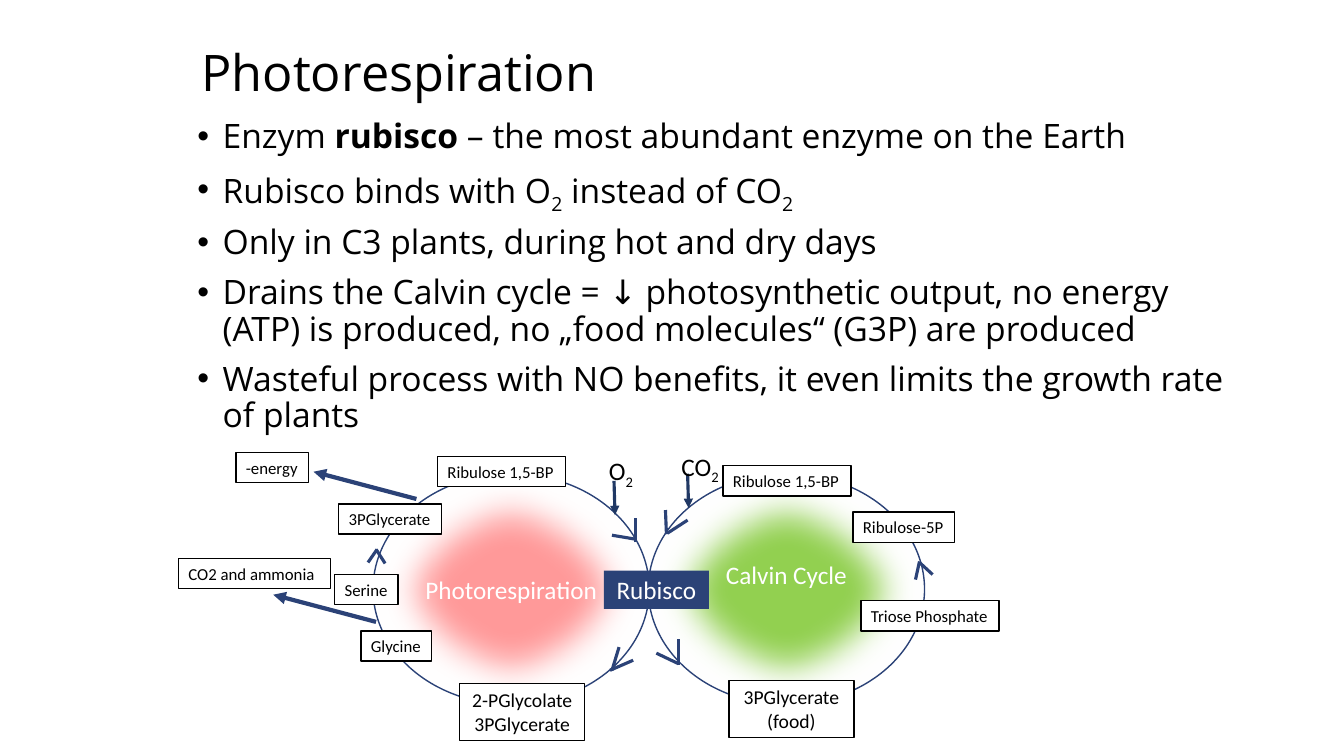
from dataclasses import dataclass
from typing import Optional

import lxml.etree
import pptx
import pptx.dml.color
import pptx.enum.shapes
import pptx.enum.text
import pptx.oxml.ns
import pptx.util

Inches, Pt = pptx.util.Inches, pptx.util.Pt
qn = pptx.oxml.ns.qn
SHAPES = pptx.enum.shapes.MSO_SHAPE
ALIGN = pptx.enum.text.PP_ALIGN
ANCHOR = pptx.enum.text.MSO_ANCHOR

BLACK, WHITE, NAVY, DARK_NAVY = "000000", "FFFFFF", "2B4277", "203864"
CYCLE_TOP, CYCLE_W, CYCLE_H = 4.7, 2.74, 2.29


@dataclass
class Run:
    text: str
    bold: bool = False
    sub: bool = False


@dataclass
class Cycle:
    name: str
    left: float
    fill: str
    line: str
    bottom_inset: float = 0.05


@dataclass
class Label:
    lines: list[str]
    left: float
    top: float
    width: float
    height: float = 0.3
    size: int = 12
    centred: bool = False


@dataclass
class Arrow:
    start: tuple[float, float]
    end: tuple[float, float]
    color: str
    weight: float


@dataclass
class Chevron:
    """Two strokes that meet at a tip and show the cycle's direction."""
    strokes: list[tuple[float, float, float, float]]


BULLETS = [
    [Run("Enzym "), Run("rubisco", bold=True), Run(" – the most abundant enzyme on the Earth")],
    [Run("Rubisco binds with O"), Run("2", sub=True), Run(" instead of CO"), Run("2", sub=True)],
    [Run("Only in C3 plants, during hot and dry days")],
    [Run("Drains the Calvin cycle = ↓ photosynthetic output, no energy (ATP) is produced, "
         "no „food molecules“ (G3P) are produced")],
    [Run("Wasteful process with NO benefits, it even limits the growth rate of plants")],
]
CYCLES = [
    Cycle("Calvin Cycle", 6.43, "92D050", BLACK, bottom_inset=0.35),
    Cycle("Photorespiration", 3.7, "FF9999", DARK_NAVY),
]
ARROWS = [
    Arrow((6.82, 4.7), (6.83, 5.04), DARK_NAVY, 2.25),
    Arrow((6.09, 4.77), (6.1, 5.11), DARK_NAVY, 2.25),
    Arrow((3.73, 6.17), (2.71, 5.9), NAVY, 3),
    Arrow((4.13, 4.95), (3.11, 4.68), NAVY, 3),
]
CHEVRONS = [
    Chevron([(6.6, 5.06, 6.61, 5.3), (6.62, 5.29, 6.82, 5.16)]),
    Chevron([(6.51, 6.48, 6.72, 6.58), (6.73, 6.6, 6.73, 6.34)]),
    Chevron([(6.07, 5.31, 6.31, 5.35), (6.3, 5.38, 6.3, 5.14)]),
    Chevron([(6.05, 6.65, 6.28, 6.55), (6.07, 6.65, 6.14, 6.42)]),
    Chevron([(9.08, 5.75, 9.12, 5.57), (9.12, 5.58, 9.25, 5.7)]),
    Chevron([(3.65, 5.58, 3.74, 5.45), (3.73, 5.45, 3.82, 5.59)]),
]
LABELS = [
    Label(["3PGlycerate (food)"], 7.23, 6.75, 1.24, 0.57, 14, True),
    Label(["Triose Phosphate"], 8.54, 5.96, 1.37),
    Label(["Ribulose-5P"], 8.46, 5.08, 1.01),
    Label(["Ribulose 1,5-BP"], 7.17, 4.62, 1.27),
    Label(["Ribulose 1,5-BP"], 4.34, 4.53, 1.27),
    Label(["2-PGlycolate", "3PGlycerate"], 4.56, 6.78, 1.24, 0.57, 14, True),
    Label(["Glycine"], 3.58, 6.26, 0.7),
    Label(["Serine"], 3.32, 5.7, 0.63),
    Label(["3PGlycerate"], 3.36, 5, 1.02),
    Label(["CO2 and ammonia"], 1.77, 5.54, 1.51),
    Label(["-energy"], 2.34, 4.49, 0.72),
]


def rgb(color: str) -> pptx.dml.color.RGBColor:
    return pptx.dml.color.RGBColor.from_string(color)


def add_runs(p, runs: list[Run], size: float, color: str = BLACK, font: str = "Calibri") -> None:
    for run in runs:
        r = p.add_run()
        r.text = run.text
        r.font.name, r.font.size, r.font.bold = font, Pt(size), run.bold
        r.font.color.rgb = rgb(color)
        if run.sub:
            r.font._element.set("baseline", "-25000")


def add_text(slide, box: tuple, paragraphs: list[list[Run]], size: float,
             font: str = "Calibri", wrap: bool = True):
    tf = slide.shapes.add_textbox(*map(Inches, box)).text_frame
    tf.word_wrap = wrap
    for i, runs in enumerate(paragraphs):
        p = tf.add_paragraph() if i else tf.paragraphs[0]
        add_runs(p, runs, size, font=font)
    return tf


def add_bullet(p) -> None:
    pPr = p._p.get_or_add_pPr()
    pPr.set("marL", str(Inches(0.25)))
    pPr.set("indent", str(Inches(-0.25)))
    lxml.etree.SubElement(pPr, qn("a:buFont")).set("typeface", "Arial")
    lxml.etree.SubElement(pPr, qn("a:buChar")).set("char", "•")


def add_box(slide, kind, box: tuple, fill: Optional[str], line: Optional[str]):
    sp = slide.shapes.add_shape(kind, *map(Inches, box))
    sp.shadow.inherit = False
    if fill:
        sp.fill.solid()
        sp.fill.fore_color.rgb = rgb(fill)
    else:
        sp.fill.background()
    if line:
        sp.line.color.rgb = rgb(line)
        sp.line.width = Pt(1)
    else:
        sp.line.fill.background()
    return sp


def add_centred(sp, text: str, color: str) -> None:
    sp.text_frame.vertical_anchor = ANCHOR.MIDDLE
    p = sp.text_frame.paragraphs[0]
    p.alignment = ALIGN.CENTER
    add_runs(p, [Run(text)], 18, color)


def add_cycle(slide, cycle: Cycle) -> None:
    sp = add_box(slide, SHAPES.OVAL, (cycle.left, CYCLE_TOP, CYCLE_W, CYCLE_H),
                 cycle.fill, cycle.line)
    effects = sp._element.spPr.find(qn("a:effectLst"))
    lxml.etree.SubElement(effects, qn("a:softEdge")).set("rad", str(Pt(25)))
    sp.text_frame.margin_bottom = Inches(cycle.bottom_inset)
    add_centred(sp, cycle.name, WHITE)


def add_label(slide, label: Label) -> None:
    sp = add_box(slide, SHAPES.RECTANGLE, (label.left, label.top, label.width, label.height),
                 WHITE, BLACK)
    tf = sp.text_frame
    tf.vertical_anchor = ANCHOR.TOP
    tf.word_wrap = label.centred
    for i, line in enumerate(label.lines):
        p = tf.add_paragraph() if i else tf.paragraphs[0]
        p.alignment = ALIGN.CENTER if label.centred else ALIGN.LEFT
        add_runs(p, [Run(line)], label.size)


def add_line(slide, ends: tuple, color: str, weight: float, arrow: bool = False) -> None:
    cx = slide.shapes.add_connector(pptx.enum.shapes.MSO_CONNECTOR.STRAIGHT, *map(Inches, ends))
    cx.line.color.rgb = rgb(color)
    cx.line.width = Pt(weight)
    if arrow:
        lxml.etree.SubElement(cx.line._get_or_add_ln(), qn("a:tailEnd")).set("type", "triangle")
    lxml.etree.SubElement(cx._element.spPr, qn("a:effectLst"))


def main() -> None:
    prs = pptx.Presentation()
    prs.slide_width, prs.slide_height = Inches(13.33), Inches(7.5)
    slide = prs.slides.add_slide(prs.slide_layouts[6])

    title = add_text(slide, (1.9, 0.43, 10.51, 1.33), [[Run("Photorespiration")]], 36, "Open Sans")
    title.paragraphs[0].line_spacing = 0.9
    body = add_text(slide, (1.86, 1.14, 10.51, 4.49), BULLETS, 24, "Open Sans")
    for i, p in enumerate(body.paragraphs):
        add_bullet(p)
        p.line_spacing = 0.9
        p.space_before = Pt(10 if i else 0)

    for cycle in CYCLES:
        add_cycle(slide, cycle)
    for cycle in CYCLES:
        add_box(slide, SHAPES.OVAL, (cycle.left, CYCLE_TOP, CYCLE_W, CYCLE_H), None, NAVY)
    rubisco = add_box(slide, SHAPES.RECTANGLE, (5.99, 5.66, 1.04, 0.38), NAVY, None)
    add_centred(rubisco, "Rubisco", WHITE)

    for arrow in ARROWS:
        add_line(slide, arrow.start + arrow.end, arrow.color, arrow.weight, arrow=True)
    for chevron in CHEVRONS:
        for stroke in chevron.strokes:
            add_line(slide, stroke, NAVY, 2.25)
    for gas, box in (("CO", (6.66, 4.43, 0.59, 0.4)), ("O", (5.94, 4.47, 0.45, 0.4))):
        add_text(slide, box, [[Run(gas), Run("2", sub=True)]], 18, wrap=False)
    for label in LABELS:
        add_label(slide, label)

    prs.save("out.pptx")


if __name__ == "__main__":
    main()
